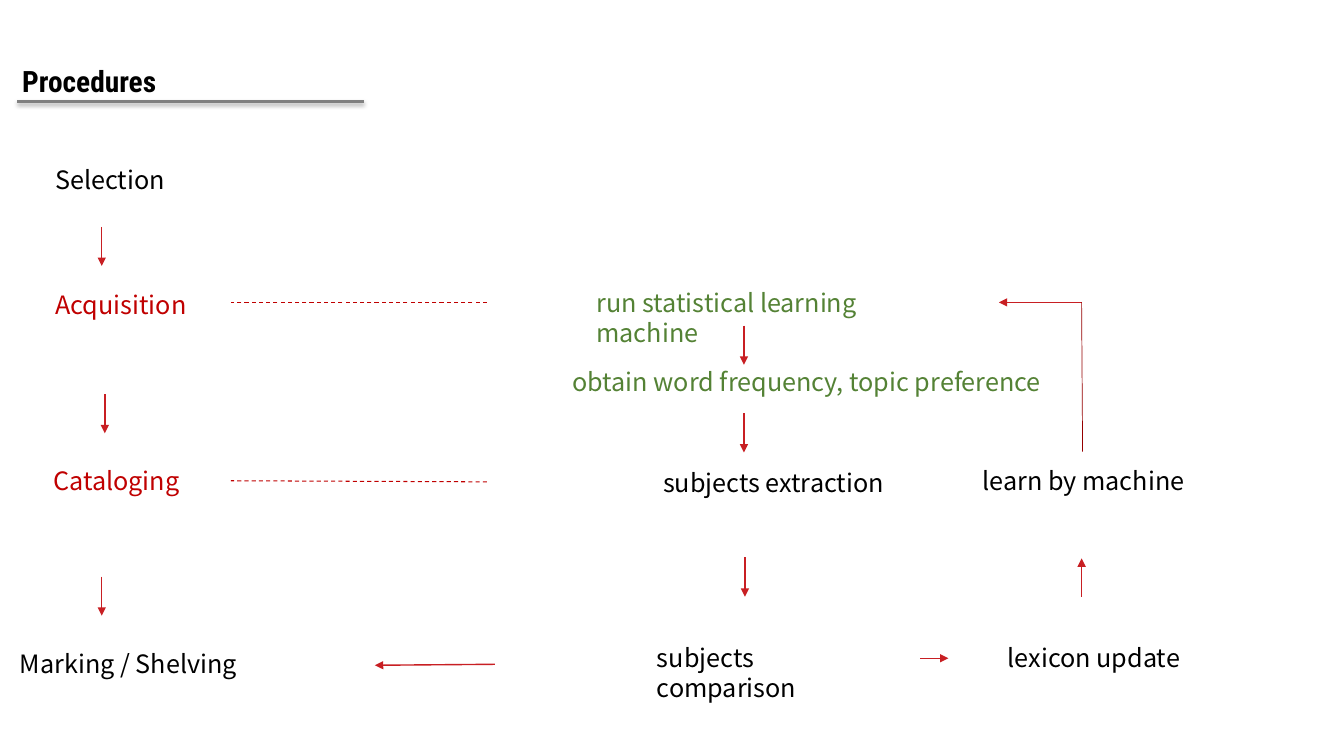
"""Build the Procedures slide: a library workflow beside its machine learning loop."""
from lxml import etree
from pptx import Presentation, util as u
from pptx.dml.color import RGBColor
from pptx.enum import dml, shapes, text
from pptx.oxml import parse_xml
from pptx.oxml.ns import qn

COLORS = {"black": "000000", "crimson": "C00000", "green": "548235",
          "arrow": "C81F23", "maroon": "960000", "gray": "808080"}
BODY_FONT, TITLE_FONT = "Noto Sans CJK SC", "Roboto Condensed"

prs = Presentation()
prs.slide_width, prs.slide_height = u.Pt(960), u.Pt(540)
s = prs.slides.add_slide(prs.slide_layouts[6])


def add_text(label, box, color, font=BODY_FONT, size=18):
    sp = s.shapes.add_textbox(*map(u.Pt, box))
    tf = sp.text_frame
    tf.word_wrap = True
    tf.text = label
    f = tf.paragraphs[0].runs[0].font
    f.name, f.size = font, u.Pt(size)
    f.color.rgb = RGBColor.from_string(COLORS[color])
    return tf


def add_line(points, color, width, arrow=False):
    sp = s.shapes.add_connector(shapes.MSO_CONNECTOR.STRAIGHT, *map(u.Pt, points))
    sp.line.color.rgb = RGBColor.from_string(COLORS[color])
    sp.line.width = u.Pt(width)
    if arrow:
        etree.SubElement(sp.line._get_or_add_ln(), qn("a:tailEnd"), type="triangle")
    etree.SubElement(sp._element.spPr, qn("a:effectLst"))
    return sp


tf = add_text("Procedures", (12.2, 40.3, 682.6, 35.3), "black", TITLE_FONT, 21)
tf.vertical_anchor = text.MSO_ANCHOR.MIDDLE
tf.margin_left = tf.margin_right = tf.margin_top = tf.margin_bottom = u.Pt(3.6)
p = tf.paragraphs[0]
p.space_before = u.Pt(18)
p.runs[0].font.bold = True

rule = add_line((12.2, 72.7, 260, 72.7), "gray", 2)
rule._element.spPr.find(qn("a:effectLst")).append(parse_xml(
    '<a:outerShdw xmlns:a="http://schemas.openxmlformats.org/drawingml/2006/main" '
    'blurRad="38100" dist="22860" dir="5400000" rotWithShape="0">'
    '<a:srgbClr val="000000"><a:alpha val="35000"/></a:srgbClr></a:outerShdw>'))

steps = [
    ("Selection", 32.4, 113.8, 186.5, "black"),
    ("Acquisition", 32.4, 203, 147.6, "crimson"),
    ("Cataloging", 31, 329, 147.6, "crimson"),
    ("Marking / Shelving", 7.2, 460.1, 172.8, "black"),
    ("run statistical learning machine", 419, 201.6, 249.1, "green"),
    ("obtain word frequency, topic preference", 401.8, 258.5, 351.4, "green"),
    ("subjects extraction", 466.6, 330.5, 181.4, "black"),
    ("subjects comparison", 462.2, 455.8, 177.8, "black"),
    ("lexicon update", 712.8, 455.8, 141.1, "black"),
    ("learn by machine", 694.8, 329, 177.8, "black"),
]
for label, left, top, width, color in steps:
    tf = add_text(label, (left, top, width, 28.8), color)
    tf.auto_size = text.MSO_AUTO_SIZE.SHAPE_TO_FIT_TEXT
    tf.paragraphs[0].line_spacing = u.Pt(21.4)

down_arrows = [(72.7, 162), (74.9, 281.5), (72.7, 411.8),
               (531.4, 232.6), (531.4, 295.2), (532.1, 398.2)]
arrows = [(x, y, x, y + 28) for x, y in down_arrows] + [
    (657.4, 470.2, 677.5, 470.2),
    (353.5, 474.5, 267.8, 475.2),
    (772.6, 426.2, 772.6, 398.9),
    (772.6, 216, 713.5, 216),
]
for points in arrows:
    add_line(points, "arrow", 1, arrow=True)
add_line((772.6, 216, 773.3, 322.6), "maroon", 0.5)

for start_y, end_y in [(216, 216), (344.2, 343.4)]:
    sp = add_line((347.8, start_y, 164.9, end_y), "crimson", 0.75)
    sp.line.dash_style = dml.MSO_LINE.DASH

prs.save("out.pptx")
